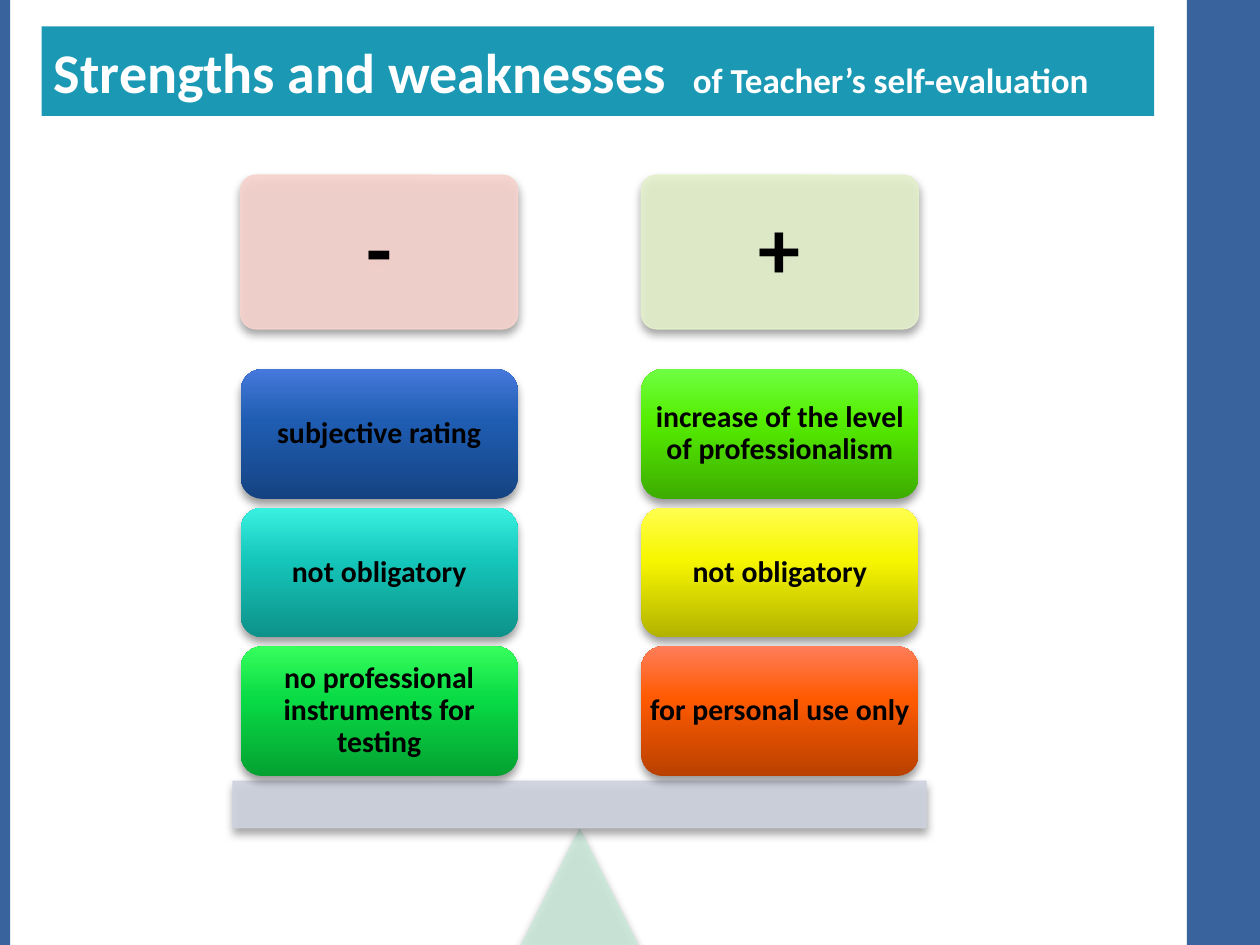
from lxml import etree
from pptx import Presentation
from pptx import util as u
from pptx.dml.color import RGBColor
from pptx.enum import shapes, text
from pptx.oxml import ns, parse_xml

BLUE = RGBColor(0x39, 0x63, 0x9D)
TEAL = RGBColor(0x1B, 0x99, 0xB4)
WHITE = RGBColor(0xFF, 0xFF, 0xFF)
BLACK = RGBColor(0, 0, 0)
PINK = RGBColor(0xF7, 0xD3, 0xCD)
LIME = RGBColor(0xE4, 0xF0, 0xCC)
MINT = RGBColor(0xCC, 0xE8, 0xDB)
GREY = RGBColor(0xCE, 0xD3, 0xDF)

KIND = shapes.MSO_SHAPE
WIDE = 2.2
TOP, HIGH, STEP = 2.93, 1.03, 1.1

# Each side: left edge, sign, sign colour, items with dark, middle and light stops
SIDES = [
    (1.91, "-", PINK, [
        ("subjective rating", "154382", "1F5DB2", "4578DB"),
        ("not obligatory", "0D9189", "15C6BA", "39F1E1"),
        ("no professional instruments for testing",
         "04A131", "09DB45", "36FF5C")]),
    (5.09, "+", LIME, [
        ("increase of the level of professionalism",
         "3DAC00", "55ED00", "6FFF42"),
        ("not obligatory", "B2B200", "F7F600", "FFFE4F"),
        ("for personal use only", "B94100", "FF5A01", "FF7D59")]),
]


def add_shape(slide, kind, box, fill=None):
    shape = slide.shapes.add_shape(kind, *map(u.Inches, box))
    shape.shadow.inherit = False
    shape.line.fill.background()
    if fill is not None:
        shape.fill.solid()
        shape.fill.fore_color.rgb = fill
    return shape


def add_shade(shape):
    """Soft shadow just below the shape."""
    glow = shape._element.spPr.find(ns.qn("a:effectLst"))
    glow.append(parse_xml(
        f'<a:outerShdw {ns.nsdecls("a")} blurRad="66000" dist="38100" '
        'dir="5400000" rotWithShape="0"><a:srgbClr val="000000">'
        '<a:alpha val="40000"/></a:srgbClr></a:outerShdw>'))


def add_pale(slide, kind, box, tint):
    """Slightly clear shape with an outline of its own colour."""
    shape = add_shape(slide, kind, box, tint)
    shape.line.color.rgb = tint
    shape.line.width = u.Pt(0.75)
    for color in shape._element.spPr.iter(ns.qn("a:srgbClr")):
        etree.SubElement(color, ns.qn("a:alpha"), val="90000")
    add_shade(shape)
    return shape


def add_block(slide, box, stops):
    """Rounded block, dark at the bottom and light at the top."""
    block = add_shape(slide, KIND.ROUNDED_RECTANGLE, box)
    block.fill.gradient()
    grad = block._element.spPr.find(ns.qn("a:gradFill"))
    marks = "".join(
        f'<a:gs pos="{pos}"><a:srgbClr val="{tone}"/></a:gs>'
        for pos, tone in zip((0, 60000, 100000), stops))
    block._element.spPr.replace(grad, parse_xml(
        f'<a:gradFill {ns.nsdecls("a")} rotWithShape="1"><a:gsLst>{marks}'
        '</a:gsLst><a:lin ang="16200000" scaled="0"/></a:gradFill>'))
    add_shade(block)
    return block


def style(part, size, color):
    form = {"name": "Calibri", "size": u.Pt(size), "bold": True}
    for key, value in form.items():
        setattr(part.font, key, value)
    part.font.color.rgb = color


def add_label(shape, words, size, inset):
    frame = shape.text_frame
    form = {"word_wrap": True, "vertical_anchor": text.MSO_ANCHOR.MIDDLE}
    for side in ("left", "right", "top", "bottom"):
        form["margin_" + side] = u.Inches(inset)
    for key, value in form.items():
        setattr(frame, key, value)
    para = frame.paragraphs[0]
    para.alignment = text.PP_ALIGN.CENTER
    para.line_spacing = 0.9
    run = para.add_run()
    run.text = words
    style(run, size, BLACK)


def add_title(slide):
    bar = add_shape(slide, KIND.RECTANGLE, (0.33, 0.21, 8.83, 0.71), TEAL)
    frame = bar.text_frame
    frame.word_wrap = True
    frame.vertical_anchor = text.MSO_ANCHOR.MIDDLE
    para = frame.paragraphs[0]
    para.alignment = text.PP_ALIGN.LEFT
    # The tab stop sets the smaller words apart
    tabs = etree.SubElement(para._p.get_or_add_pPr(), ns.qn("a:tabLst"))
    etree.SubElement(tabs, ns.qn("a:tab"), pos=str(u.Inches(5.07)), algn="l")
    for words, size in (("Strengths and weaknesses\t", 32),
                        ("of Teacher’s self-evaluation", 20)):
        run = para.add_run()
        run.text = words
        style(run, size, WHITE)


def add_side(slide, left, sign, tint, items):
    head = add_pale(slide, KIND.ROUNDED_RECTANGLE,
                    (left, 1.39, WIDE, 1.22), tint)
    head.adjustments[0] = 0.1
    add_label(head, sign, 48, 0.17)
    for row, (words, *stops) in enumerate(items):
        box = (left, TOP + row * STEP, WIDE, HIGH)
        add_label(add_block(slide, box, stops), words, 17, 0.02)


def main():
    deck = Presentation()
    deck.slide_width, deck.slide_height = u.Inches(10), u.Inches(7.5)
    slide = deck.slides.add_slide(deck.slide_layouts[6])

    # Edge bands and title
    for left, wide in ((9.42, 0.58), (0, 0.08)):
        add_shape(slide, KIND.RECTANGLE, (left, 0, wide, 7.5), BLUE)
    add_title(slide)

    # Scale: pivot and beam
    add_pale(slide, KIND.ISOSCELES_TRIANGLE, (4.14, 6.58, 0.92, 0.92), MINT)
    add_pale(slide, KIND.RECTANGLE, (1.85, 6.2, 5.5, 0.37), GREY)

    # Weights on both sides
    for side in SIDES:
        add_side(slide, *side)
    deck.save("out.pptx")


if __name__ == "__main__":
    main()
